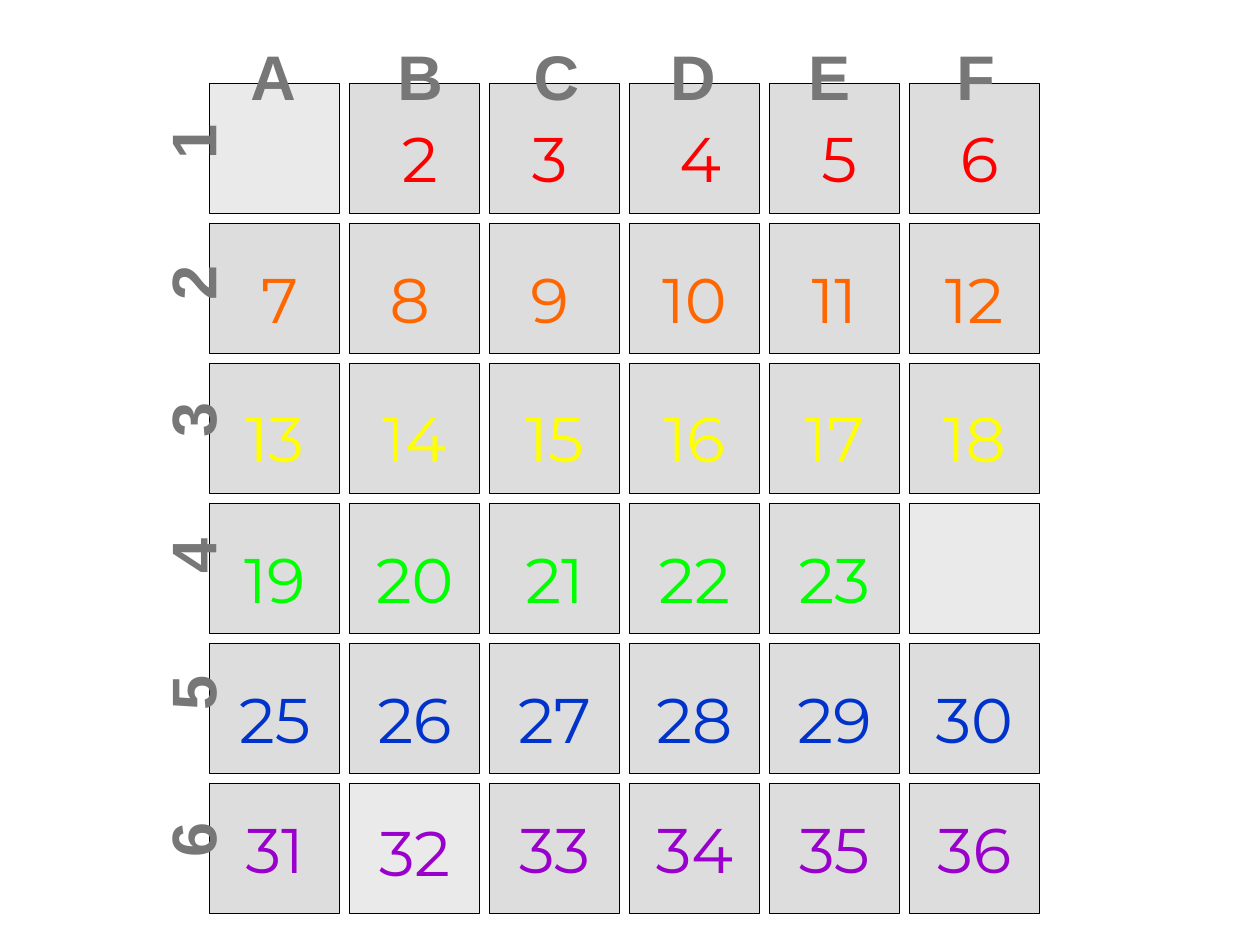
"""Build a six by six grid of coloured numbers with letter and digit labels."""
from dataclasses import dataclass

from pptx import Presentation
from pptx.dml.color import RGBColor
from pptx.enum.shapes import MSO_SHAPE as Preset
from pptx.enum.text import MSO_ANCHOR as Anchor, PP_ALIGN as Align
from pptx.slide import Slide
from pptx.util import Cm, Pt

BLACK = RGBColor(0x00, 0x00, 0x00)
GREY = RGBColor(0xDD, 0xDD, 0xDD)
PALE = RGBColor(0xEA, 0xEA, 0xEA)
DARK = RGBColor(0x77, 0x77, 0x77)
RED = RGBColor(0xFF, 0x00, 0x00)
ORANGE = RGBColor(0xFF, 0x66, 0x00)
YELLOW = RGBColor(0xFF, 0xFF, 0x00)
GREEN = RGBColor(0x00, 0xFF, 0x00)
BLUE = RGBColor(0x00, 0x33, 0xCC)
PURPLE = RGBColor(0x99, 0x00, 0xCC)

SIDE = 6
LEFT, TOP = 4.23, 1.69
STEP, SIZE = 2.82, 2.62
MID = 5.54
HIGH = 1.71
INSET = 0.13
BLANK = {1, 24}
LIGHT = BLANK | {32}
LEFTWARD = {3, 8, 9}


@dataclass(frozen=True)
class Row:
    top: float
    color: RGBColor


@dataclass(frozen=True)
class Style:
    font: str
    bold: bool


@dataclass(frozen=True)
class Label:
    text: str
    x: float
    y: float
    wide: float
    high: float
    color: RGBColor
    style: Style
    turn: int = 0


DIGIT = Style("Montserrat", False)
HEAD = Style("Arial", True)
ROWS = (
    Row(2.29, RED),
    Row(5.13, ORANGE),
    Row(7.92, YELLOW),
    Row(10.77, GREEN),
    Row(13.59, BLUE),
    Row(16.2, PURPLE),
)
COL_MIDS = (5.47, 8.43, 11.18, 13.93, 16.71, 19.67)
ROW_MIDS = (2.86, 5.7, 8.47, 11.21, 13.96, 16.93)


def draw_cell(slide: Slide, row: int, col: int, fill: RGBColor) -> None:
    cell = slide.shapes.add_shape(
        Preset.RECTANGLE, Cm(LEFT + col * STEP), Cm(TOP + row * STEP), Cm(SIZE), Cm(SIZE)
    )
    cell.shadow.inherit = False
    cell.fill.solid()
    cell.fill.fore_color.rgb = fill
    cell.line.color.rgb = BLACK
    cell.line.width = Pt(0.75)


def draw_label(slide: Slide, label: Label) -> None:
    box = slide.shapes.add_textbox(
        Cm(label.x - label.wide / 2), Cm(label.y - label.high / 2), Cm(label.wide), Cm(label.high)
    )
    box.rotation = label.turn
    frame = box.text_frame
    frame.word_wrap = False
    frame.vertical_anchor = Anchor.TOP
    frame.margin_left = frame.margin_right = frame.margin_bottom = 0
    frame.margin_top = Cm(INSET)
    para = frame.paragraphs[0]
    para.alignment = Align.CENTER
    run = para.add_run()
    run.text = label.text
    run.font.size = Pt(36)
    run.font.name = label.style.font
    run.font.bold = label.style.bold
    run.font.color.rgb = label.color


def make_digit(num: int, row: Row, col: int) -> Label:
    shift = 0 if num > 9 else -0.1 if num in LEFTWARD else 0.1
    drop = 0.08 if num in LIGHT else 0
    wide = 1.8 if num > 9 else 0.81
    return Label(
        str(num), MID + col * STEP + shift, row.top + drop + HIGH / 2, wide, HIGH, row.color, DIGIT
    )


def make_head(text: str, x: float, y: float, turn: int = 0) -> Label:
    return Label(text, x, y, 0.84, 0.69, DARK, HEAD, turn)


def main() -> None:
    deck = Presentation()
    deck.slide_width, deck.slide_height = Cm(25.4), Cm(19.05)
    slide = deck.slides.add_slide(deck.slide_layouts[6])
    for place in range(SIDE * SIDE):
        row, col = divmod(place, SIDE)
        num = place + 1
        draw_cell(slide, row, col, PALE if num in LIGHT else GREY)
        if num not in BLANK:
            draw_label(slide, make_digit(num, ROWS[row], col))
    for text, x in zip("ABCDEF", COL_MIDS):
        draw_label(slide, make_head(text, x, 0.98))
    for text, y in zip("123456", ROW_MIDS):
        draw_label(slide, make_head(text, 3.31, y, 270))
    deck.save("out.pptx")


if __name__ == "__main__":
    main()
